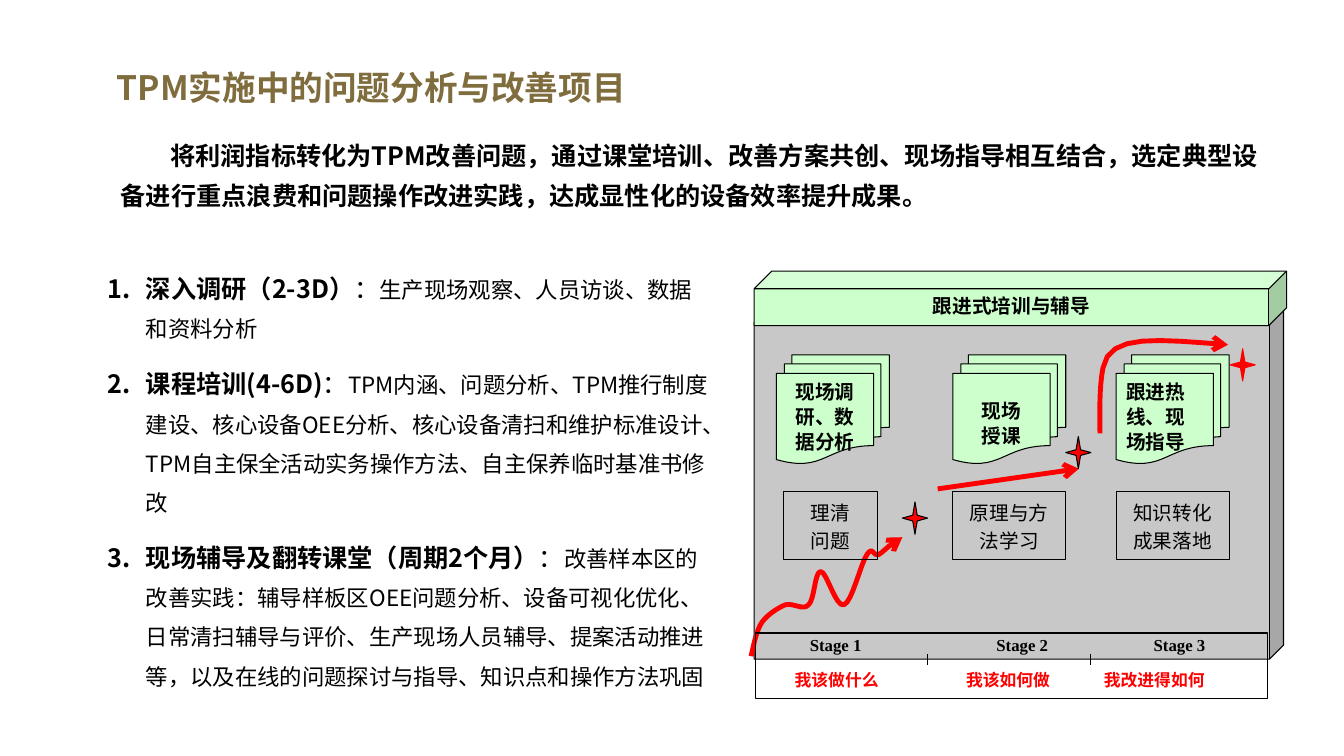
"""Build the slide on TPM problem analysis and improvement projects."""
from dataclasses import dataclass

from lxml.etree import SubElement
from pptx import Presentation
from pptx.dml.color import RGBColor
from pptx.enum.shapes import MSO_CONNECTOR, MSO_SHAPE
from pptx.enum.text import MSO_ANCHOR, PP_ALIGN
from pptx.oxml.ns import qn
from pptx.util import Inches, Pt


@dataclass(frozen=True)
class Theme:
    sans: str = "Noto Sans CJK SC"
    serif: str = "Times New Roman"
    black: str = "000000"
    red: str = "FF0000"
    green: str = "CCFFCC"
    gray: str = "C0C0C0"
    gold: str = "806D3E"
    title: int = 24
    lead: int = 18
    body: int = 16
    card: int = 14
    stage: int = 12
    thin: float = 0.75
    thick: float = 3.5


THEME = Theme()

TITLE = "TPM实施中的问题分析与改善项目"
LEAD = "将利润指标转化为TPM改善问题，通过课堂培训、改善方案共创、现场指导相互结合，选定典型设备进行重点浪费和问题操作改进实践，达成显性化的设备效率提升成果。"
STEPS = [
    ("深入调研（2-3D）", "生产现场观察、人员访谈、数据和资料分析"),
    ("课程培训(4-6D)", "TPM内涵、问题分析、TPM推行制度建设、核心设备OEE分析、核心设备清扫和维护标准设计、TPM自主保全活动实务操作方法、自主保养临时基准书修改"),
    ("现场辅导及翻转课堂（周期2个月）", "改善样本区的改善实践：辅导样板区OEE问题分析、设备可视化优化、日常清扫辅导与评价、生产现场人员辅导、提案活动推进等，以及在线的问题探讨与指导、知识点和操作方法巩固"),
]
BANNER = "跟进式培训与辅导"
DOCUMENTS = [
    (7.7, ["现场调研、数据分析"], PP_ALIGN.CENTER, 0.05),
    (9.45, ["现场", "授课"], PP_ALIGN.CENTER, 0.24),
    (11.07, ["跟进热线、现场指导"], PP_ALIGN.LEFT, 0.05),
]
OUTCOMES = [
    (7.77, 0.93, ["理清", "问题"]),
    (9.45, 1.12, ["原理与方法学习"]),
    (11.07, 1.12, ["知识转化", "成果落地"]),
]
STAGE_ROWS = [
    (6.25, THEME.black, [("Stage 1", 0.74), ("Stage 2", 2.59), ("Stage 3", 4.15)]),
    (6.6, THEME.red, [("我该做什么", 0.75), ("我该如何做", 2.45), ("我改进得如何", 3.9)]),
]
TICKS = [9.2, 10.82]
STARS = [(8.95, 4.98, THEME.black), (10.57, 4.33, THEME.black), (12.2, 3.46, THEME.red)]
STAGE_ARROW = [(9.3, 4.85), (10.7, 4.65)]
WAVY_CURVE = [
    (7.45, 6.51), (7.48, 6.38), (7.5, 6.26), (7.56, 6.17), (7.62, 6.09), (7.72, 6.03),
    (7.79, 6), (7.87, 5.98), (7.97, 6.06), (8.02, 6), (8.08, 5.95), (8.08, 5.67),
    (8.14, 5.67), (8.2, 5.67), (8.29, 6.03), (8.37, 6), (8.45, 5.98), (8.54, 5.58),
    (8.6, 5.5), (8.66, 5.41), (8.66, 5.53), (8.72, 5.5), (8.77, 5.47), (8.93, 5.3), (8.95, 5.33),
]
RISING_CURVE = [
    (10.91, 4.3), (10.91, 4.1), (10.9, 3.85), (10.94, 3.65), (11, 3.3), (11.5, 3.37), (12.18, 3.42),
]

deck = Presentation()
deck.slide_width, deck.slide_height = Inches(13.33), Inches(7.5)
page = deck.slides.add_slide(deck.slide_layouts[6])


def style_paragraph(para, size, color=THEME.black, bold=False, name=THEME.sans):
    font = para.font
    font.size, font.bold, font.name = Pt(size), bold, name
    font.color.rgb = RGBColor.from_string(color)
    SubElement(para._p.pPr.find(qn("a:defRPr")), qn("a:ea"), typeface=THEME.sans)


def write(box, lines, size, align=PP_ALIGN.LEFT, spacing=None, **options):
    frame = box.text_frame
    frame.word_wrap = True
    for index, line in enumerate(lines):
        para = frame.paragraphs[0] if index == 0 else frame.add_paragraph()
        para.text, para.alignment = line, align
        if spacing:
            para.line_spacing = Pt(spacing)
        style_paragraph(para, size, **options)
    return frame


def add_text_box(left, top, width, height):
    return page.shapes.add_textbox(Inches(left), Inches(top), Inches(width), Inches(height))


def add_box(kind, left, top, width, height, fill=None, line=THEME.black, adjust=None):
    box = page.shapes.add_shape(kind, Inches(left), Inches(top), Inches(width), Inches(height))
    box.shadow.inherit = False
    if fill:
        box.fill.solid()
        box.fill.fore_color.rgb = RGBColor.from_string(fill)
    else:
        box.fill.background()
    box.line.color.rgb = RGBColor.from_string(line)
    box.line.width = Pt(THEME.thin)
    if adjust is not None:
        box.adjustments[0] = adjust
    box.text_frame.vertical_anchor = MSO_ANCHOR.TOP
    return box


def add_line(start, end, color=THEME.black, width=THEME.thin):
    line = page.shapes.add_connector(MSO_CONNECTOR.STRAIGHT, *map(Inches, start + end))
    line.line.color.rgb = RGBColor.from_string(color)
    line.line.width = Pt(width)
    SubElement(line._element.spPr, qn("a:effectLst"))
    return line


def add_arrowhead(shape):
    SubElement(shape.line._get_or_add_ln(), qn("a:tailEnd"), type="arrow")


def curve_points(knots, steps=8):
    for first in range(0, len(knots) - 1, 3):
        corners = knots[first:first + 4]
        for step in range(1, steps + 1):
            t = step / steps
            weights = ((1 - t) ** 3, 3 * t * (1 - t) ** 2, 3 * t * t * (1 - t), t ** 3)
            yield tuple(Inches(sum(w * c[axis] for w, c in zip(weights, corners))) for axis in (0, 1))


def add_curve(knots):
    builder = page.shapes.build_freeform(*map(Inches, knots[0]))
    builder.add_line_segments(curve_points(knots), close=False)
    curve = builder.convert_to_shape()
    curve.shadow.inherit = False
    curve.fill.background()
    curve.line.color.rgb = RGBColor.from_string(THEME.red)
    curve.line.width = Pt(THEME.thick)
    add_arrowhead(curve)


def add_panel():
    panel = add_box(MSO_SHAPE.CUBE, 7.48, 3.06, 5.25, 3.48, THEME.gray, adjust=0.04)
    SubElement(panel._element.spPr.find(".//" + qn("a:srgbClr")), qn("a:alpha"), val="86000")
    add_arrowhead(add_line(*STAGE_ARROW, THEME.red, THEME.thick))
    add_curve(WAVY_CURVE)
    for left in TICKS:
        add_line((left, 6.49), (left, 6.6))
    for left, top, outline in STARS:
        add_box(MSO_SHAPE.STAR_4_POINT, left, top, 0.25, 0.32, THEME.red, outline, 0.125)
    for left, lines, align, inset in DOCUMENTS:
        box = add_box(MSO_SHAPE.FLOWCHART_MULTIDOCUMENT, left, 3.52, 1.12, 1.08, THEME.green)
        write(box, lines, THEME.card, align, 18, bold=True).margin_top = Inches(inset)
    banner = add_box(MSO_SHAPE.CUBE, 7.48, 2.69, 5.28, 0.54, THEME.green, adjust=0.324)
    write(banner, [BANNER], THEME.card, PP_ALIGN.CENTER, bold=True)
    for top, color, labels in STAGE_ROWS:
        row = add_text_box(7.45, top, 5.25, 0.43)
        tabs = SubElement(row.text_frame.paragraphs[0]._p.get_or_add_pPr(), qn("a:tabLst"))
        for _, center in labels:
            SubElement(tabs, qn("a:tab"), pos=str(Inches(center)), algn="ctr")
        line = "".join("\t" + label for label, _ in labels)
        write(row, [line], THEME.stage, color=color, bold=True, name=THEME.serif)
    add_box(MSO_SHAPE.RECTANGLE, 7.49, 6.28, 5.08, 0.65)
    for left, width, lines in OUTCOMES:
        box = add_box(MSO_SHAPE.RECTANGLE, left, 4.88, width, 0.67)
        write(box, lines, THEME.card, PP_ALIGN.CENTER, 20)
    add_curve(RISING_CURVE)


def add_steps():
    frame = add_text_box(0.97, 2.57, 6.16, 4.32).text_frame
    frame.word_wrap = True
    for index, (heading, detail) in enumerate(STEPS):
        para = frame.add_paragraph() if index else frame.paragraphs[0]
        para.line_spacing = Pt(28)
        if index:
            para.space_before = Pt(12)
        properties = para._p.get_or_add_pPr()
        properties.set("marL", str(Inches(0.38)))
        properties.set("indent", str(-Inches(0.38)))
        SubElement(properties, qn("a:buFont"), typeface="+mj-lt")
        SubElement(properties, qn("a:buAutoNum"), type="arabicPeriod")
        style_paragraph(para, THEME.lead)
        for text, size, bold in ((heading, THEME.lead, True), ("：", THEME.lead, False), (detail, THEME.body, False)):
            span = para.add_run()
            span.text = text
            span.font.size, span.font.bold = Pt(size), bold


add_panel()
add_steps()
write(add_text_box(1.06, 0.61, 5.35, 0.5), [TITLE], THEME.title, color=THEME.gold, bold=True).word_wrap = False
lead = write(add_text_box(1.1, 1.27, 11.67, 0.85), [LEAD], THEME.lead, spacing=28, bold=True)
lead.vertical_anchor = MSO_ANCHOR.MIDDLE
lead.paragraphs[0]._p.pPr.set("indent", str(Inches(0.49)))
deck.save("out.pptx")
